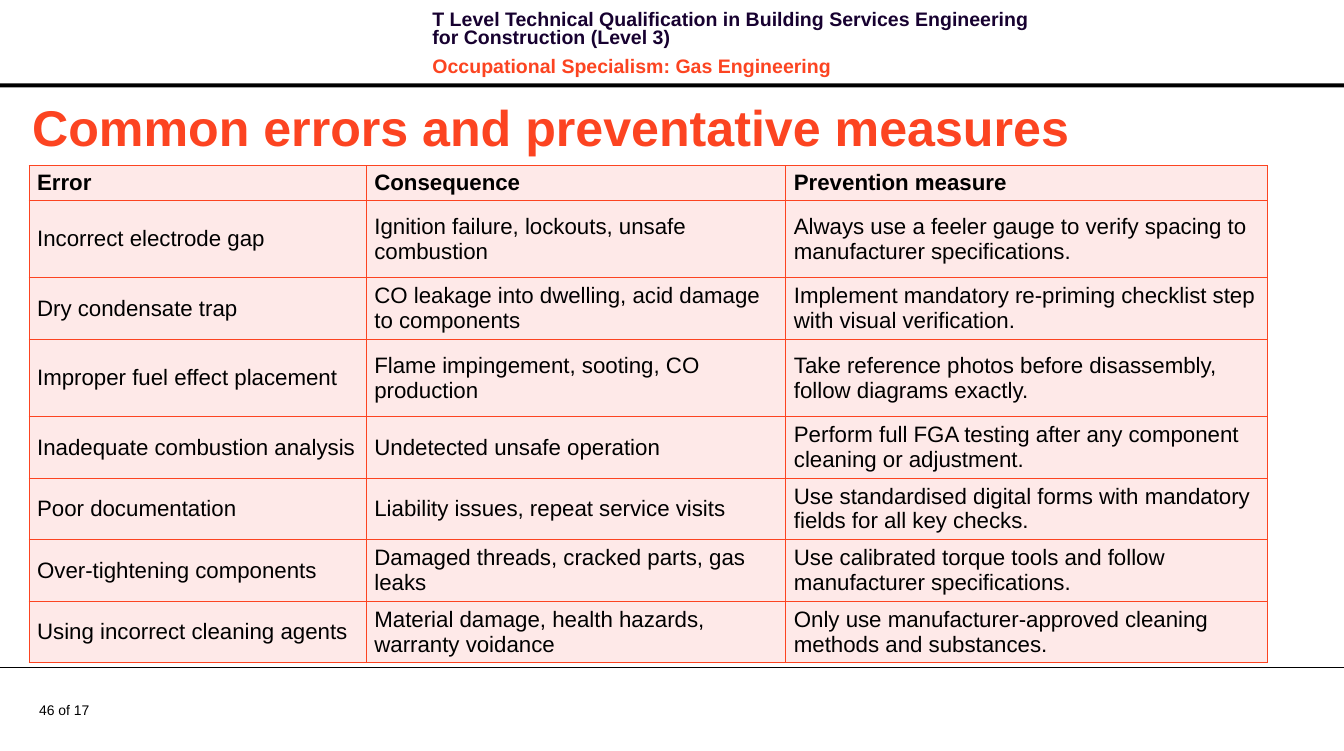
from dataclasses import dataclass

from lxml import etree
from pptx import Presentation
from pptx.dml.color import RGBColor
from pptx.enum.shapes import MSO_CONNECTOR, MSO_SHAPE
from pptx.enum.text import MSO_ANCHOR, PP_ALIGN
from pptx.oxml.ns import qn
from pptx.util import Inches, Pt

STRAIGHT = MSO_CONNECTOR.STRAIGHT
RECTANGLE = MSO_SHAPE.RECTANGLE
MIDDLE = MSO_ANCHOR.MIDDLE
LEFT = PP_ALIGN.LEFT

FONT = "Arial"
COLORS = {
    "black": "000000",
    "navy": "170130",
    "orange": "FC4421",
    "blush": "FEE9E8",
}
SLIDE_W, SLIDE_H = 13.39, 7.48
COLUMN_WIDTHS = (3.36, 4.18, 4.8)
HEADER_H, ROW_H, TALL_ROW_H = 0.31, 0.57, 0.77


@dataclass(frozen=True)
class ErrorRow:
    error: str
    consequence: str
    prevention: str
    height: float = ROW_H
    bold: bool = False


@dataclass(frozen=True)
class HeaderLine:
    text: str
    color: str
    before: float


ROWS = (
    ErrorRow("Error", "Consequence", "Prevention measure", HEADER_H, True),
    ErrorRow("Incorrect electrode gap",
             "Ignition failure, lockouts, unsafe combustion",
             "Always use a feeler gauge to verify spacing to manufacturer specifications.",
             TALL_ROW_H),
    ErrorRow("Dry condensate trap",
             "CO leakage into dwelling, acid damage to components",
             "Implement mandatory re-priming checklist step with visual verification."),
    ErrorRow("Improper fuel effect placement",
             "Flame impingement, sooting, CO production",
             "Take reference photos before disassembly, follow diagrams exactly.",
             TALL_ROW_H),
    ErrorRow("Inadequate combustion analysis",
             "Undetected unsafe operation",
             "Perform full FGA testing after any component cleaning or adjustment."),
    ErrorRow("Poor documentation",
             "Liability issues, repeat service visits",
             "Use standardised digital forms with mandatory fields for all key checks."),
    ErrorRow("Over-tightening components",
             "Damaged threads, cracked parts, gas leaks",
             "Use calibrated torque tools and follow manufacturer specifications."),
    ErrorRow("Using incorrect cleaning agents",
             "Material damage, health hazards, warranty voidance",
             "Only use manufacturer-approved cleaning methods and substances."),
)
HEADER_LINES = (
    HeaderLine("T Level Technical Qualification in Building Services Engineering "
               "for Construction (Level 3)", "navy", 0),
    HeaderLine("Occupational Specialism: Gas Engineering", "orange", 4),
)


def rgb(color: str) -> RGBColor:
    return RGBColor.from_string(COLORS[color])


def set_text(p, text: str, size: float, color: str, bold: bool = False) -> None:
    p.text = text
    p.alignment = LEFT
    p.font.name = FONT
    p.font.size = Pt(size)
    p.font.bold = bold
    p.font.color.rgb = rgb(color)


def add_text_frame(slide, left: float, top: float, width: float, height: float):
    box = slide.shapes.add_textbox(Inches(left), Inches(top), Inches(width), Inches(height))
    box.text_frame.word_wrap = True
    return box.text_frame


def add_rules(slide) -> None:
    bar = slide.shapes.add_shape(RECTANGLE, 0, Inches(0.83), Inches(SLIDE_W), Inches(0.04))
    bar.shadow.inherit = False
    bar.fill.solid()
    bar.fill.fore_color.rgb = rgb("black")
    bar.line.fill.background()

    y = Inches(6.65)
    rule = slide.shapes.add_connector(STRAIGHT, 0, y, Inches(SLIDE_W), y)
    rule.line.color.rgb = rgb("black")
    rule.line.width = Pt(0.75)
    etree.SubElement(rule.element.spPr, qn("a:effectLst"))


def add_header(slide) -> None:
    tf = add_text_frame(slide, 4.21, 0.07, 6.37, 0.64)
    for i, line in enumerate(HEADER_LINES):
        p = tf.add_paragraph() if i else tf.paragraphs[0]
        set_text(p, line.text, 14, line.color, True)
        p.line_spacing = Pt(13.1)
        p.space_before = Pt(line.before)
        p.space_after = Pt(4)


def add_title(slide) -> None:
    title = slide.shapes.title
    title.left, title.top = Inches(0.22), Inches(0.9)
    title.width, title.height = Inches(12.72), Inches(0.71)
    title.text_frame.vertical_anchor = MIDDLE
    set_text(title.text_frame.paragraphs[0],
             "Common errors and preventative measures", 36, "orange", True)


def add_page_number(slide) -> None:
    tf = add_text_frame(slide, 0.39, 6.99, 0.64, 0.17)
    tf.margin_left = tf.margin_right = tf.margin_top = tf.margin_bottom = 0
    tf.vertical_anchor = MIDDLE
    set_text(tf.paragraphs[0], "46 of 17", 10, "black")


def format_cell(cell, text: str, bold: bool) -> None:
    cell.margin_left = cell.margin_right = Inches(0.08)
    cell.margin_top = cell.margin_bottom = Inches(0.04)
    cell.vertical_anchor = MIDDLE
    set_text(cell.text_frame.paragraphs[0], text, 16, "black", bold)
    tc_pr = cell._tc.get_or_add_tcPr()
    for side in ("lnL", "lnR", "lnT", "lnB"):
        ln = etree.SubElement(tc_pr, qn(f"a:{side}"), w=str(Pt(1)))
        fill = etree.SubElement(ln, qn("a:solidFill"))
        etree.SubElement(fill, qn("a:srgbClr"), val=COLORS["orange"])
    cell.fill.solid()
    cell.fill.fore_color.rgb = rgb("blush")


def add_error_table(slide) -> None:
    height = sum(row.height for row in ROWS)
    table = slide.shapes.add_table(
        len(ROWS), len(COLUMN_WIDTHS), Inches(0.29), Inches(1.65),
        Inches(sum(COLUMN_WIDTHS)), Inches(height)).table
    table.horz_banding = False
    for column, width in zip(table.columns, COLUMN_WIDTHS):
        column.width = Inches(width)
    for table_row, row in zip(table.rows, ROWS):
        table_row.height = Inches(row.height)
        texts = (row.error, row.consequence, row.prevention)
        for cell, text in zip(table_row.cells, texts):
            format_cell(cell, text, row.bold)


def main() -> None:
    prs = Presentation()
    prs.slide_width, prs.slide_height = Inches(SLIDE_W), Inches(SLIDE_H)
    slide = prs.slides.add_slide(prs.slide_layouts[5])
    add_rules(slide)
    add_header(slide)
    add_title(slide)
    add_page_number(slide)
    add_error_table(slide)
    prs.save("out.pptx")


if __name__ == "__main__":
    main()
